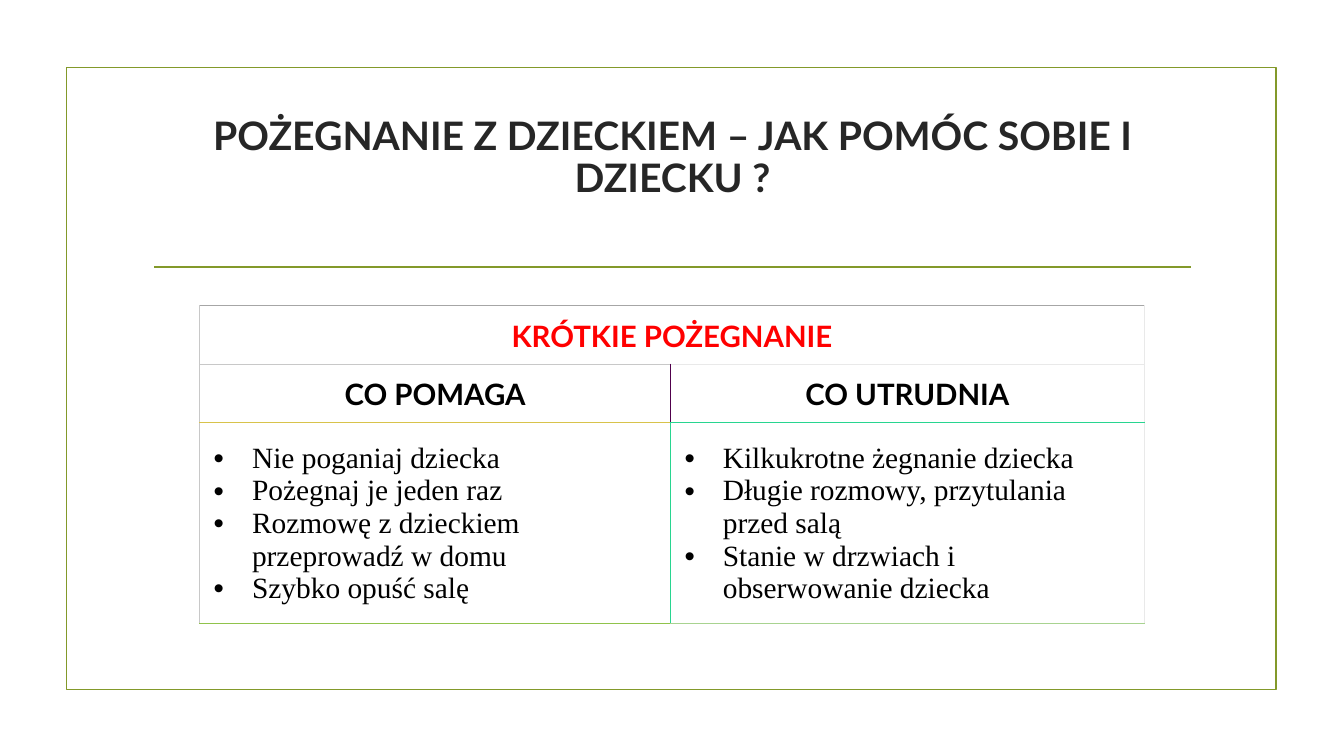
"""Build a slide with a table on saying a short goodbye to a child."""
from lxml.etree import SubElement
from pptx import Presentation
from pptx.dml.color import RGBColor
from pptx.enum.shapes import MSO_CONNECTOR, MSO_SHAPE
from pptx.enum.text import MSO_ANCHOR, MSO_AUTO_SIZE, PP_ALIGN
from pptx.oxml.ns import qn
from pptx.util import Inches, Pt

OLIVE = RGBColor(0x83, 0x99, 0x2A)
CHARCOAL = RGBColor(0x26, 0x26, 0x26)
BLACK = RGBColor(0, 0, 0)
RED = RGBColor(0xFF, 0, 0)
WHITE = RGBColor(0xFF, 0xFF, 0xFF)
GRAY = RGBColor(0xA6, 0xA6, 0xA6)
SILVER = RGBColor(0xC8, 0xC8, 0xC8)
PALE = RGBColor(0xE9, 0xE9, 0xE9)
PURPLE = RGBColor(0x50, 0x00, 0x4C)
YELLOW = RGBColor(0xD8, 0xC3, 0x4B)
TEAL = RGBColor(0x28, 0xD5, 0x90)
GREEN = RGBColor(0x90, 0xC3, 0x4B)
LIGHT_GREEN = RGBColor(0xA8, 0xD3, 0x90)


def format_text(paragraph, font_name, size, color, bold):
    for run in paragraph.runs:
        run.font.name = font_name
        run.font.size = Pt(size)
        run.font.color.rgb = color
        run.font.bold = bold


def add_borders(cell, colors):
    properties = cell._tc.get_or_add_tcPr()
    for side, color in zip(("lnL", "lnR", "lnT", "lnB"), colors):
        border = SubElement(properties, qn(f"a:{side}"), w=str(Pt(0.6)))
        fill = SubElement(border, qn("a:solidFill"))
        SubElement(fill, qn("a:srgbClr"), val=str(color))


presentation = Presentation()
presentation.slide_width = Inches(13.33)
presentation.slide_height = Inches(7.5)
slide = presentation.slides.add_slide(presentation.slide_layouts[5])

frame = slide.shapes.add_shape(
    MSO_SHAPE.RECTANGLE, Inches(0.66), Inches(0.67), Inches(12), Inches(6.17))
frame.shadow.inherit = False
frame.fill.background()
frame.line.color.rgb = OLIVE
frame.line.width = Pt(1.25)

divider = slide.shapes.add_connector(
    MSO_CONNECTOR.STRAIGHT, Inches(1.53), Inches(2.65), Inches(11.81), Inches(2.65))
divider.line.color.rgb = OLIVE
divider.line.width = Pt(1.25)
SubElement(divider._element.spPr, qn("a:effectLst"))

title = slide.shapes.title
title.left, title.top = Inches(1.42), Inches(1.07)
title.width, title.height = Inches(10.5), Inches(1.43)
heading = title.text_frame
heading.text = "POŻEGNANIE Z DZIECKIEM – JAK POMÓC SOBIE I DZIECKU ?"
heading.word_wrap = True
heading.auto_size = MSO_AUTO_SIZE.NONE
heading.vertical_anchor = MSO_ANCHOR.MIDDLE
heading.margin_bottom = Inches(0.47)
heading.paragraphs[0].alignment = PP_ALIGN.CENTER
heading.paragraphs[0].line_spacing = 0.9
format_text(heading.paragraphs[0], "Lato", 28, CHARCOAL, True)

advice = slide.shapes.add_table(
    3, 2, Inches(1.98), Inches(3.03), Inches(9.37), Inches(3.15)).table
for column, width in zip(advice.columns, (4.67, 4.7)):
    column.width = Inches(width)
for row, height in zip(advice.rows, (0.58, 0.58, 1.99)):
    row.height = Inches(height)
advice.cell(0, 0).merge(advice.cell(0, 1))

contents = [
    [["KRÓTKIE POŻEGNANIE"], []],
    [["CO POMAGA"], ["CO UTRUDNIA"]],
    [["Nie poganiaj dziecka", "Pożegnaj je jeden raz",
      "Rozmowę z dzieckiem przeprowadź w domu", "Szybko opuść salę"],
     ["Kilkukrotne żegnanie dziecka", "Długie rozmowy, przytulania przed salą",
      "Stanie w drzwiach i obserwowanie dziecka"]],
]
borders = [
    [(SILVER, PALE, GRAY, SILVER), (SILVER, PALE, GRAY, PALE)],
    [(SILVER, PURPLE, SILVER, YELLOW), (PURPLE, PALE, PALE, TEAL)],
    [(SILVER, TEAL, YELLOW, GREEN), (TEAL, PALE, TEAL, LIGHT_GREEN)],
]

for row_index, row_contents in enumerate(contents):
    for column_index, lines in enumerate(row_contents):
        cell = advice.cell(row_index, column_index)
        add_borders(cell, borders[row_index][column_index])
        cell.fill.solid()
        cell.fill.fore_color.rgb = WHITE
        cell.vertical_anchor = MSO_ANCHOR.MIDDLE
        cell.margin_left = cell.margin_right = Inches(0.14)
        cell.margin_top, cell.margin_bottom = Inches(0.1), Inches(0.08)
        if not lines:
            continue
        cell.text_frame.text = "\n".join(lines)
        for paragraph in cell.text_frame.paragraphs:
            if row_index < 2:
                paragraph.alignment = PP_ALIGN.CENTER
                format_text(paragraph, "Lato", 21, BLACK if row_index else RED, True)
            else:
                properties = paragraph._p.get_or_add_pPr()
                properties.set("marL", str(Inches(0.38)))
                properties.set("indent", str(-Inches(0.38)))
                SubElement(properties, qn("a:buFont"), typeface="Arial")
                SubElement(properties, qn("a:buChar"), char="•")
                format_text(paragraph, "Times New Roman", 21, BLACK, False)

presentation.save("out.pptx")
